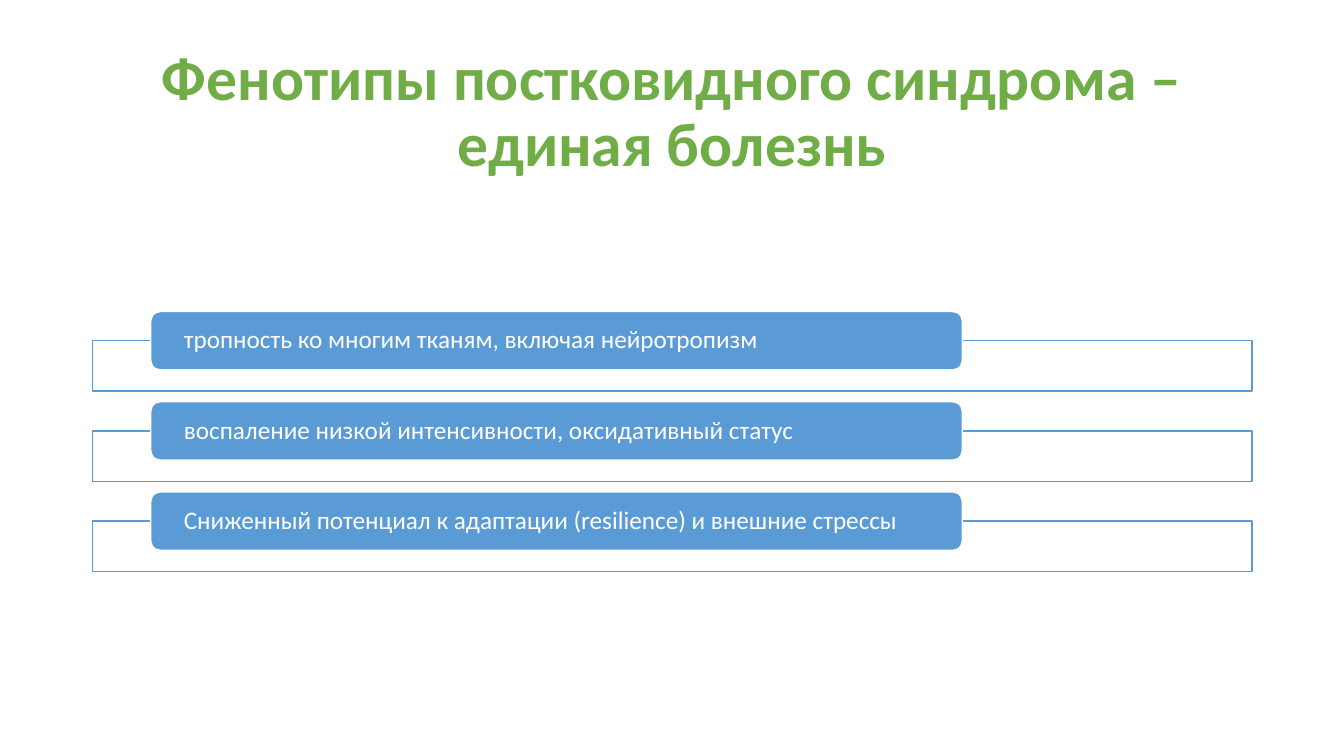
from pptx import Presentation
from pptx.dml.color import RGBColor
from pptx.enum.shapes import MSO_SHAPE as Shape
from pptx.enum.text import MSO_ANCHOR as Anchor, MSO_AUTO_SIZE as AutoSize, PP_ALIGN as Align
from pptx.oxml.ns import qn
from pptx.util import Inches, Pt
from lxml.etree import SubElement

COLORS = {"title": "70AD47", "accent": "5B9BD5", "white": "FFFFFF"}
TITLE = "Фенотипы постковидного синдрома – единая болезнь"
PHENOTYPES = [
    "тропность ко многим тканям, включая нейротропизм",
    "воспаление низкой интенсивности, оксидативный статус",
    "Сниженный потенциал к адаптации (resilience) и внешние стрессы",
]
TITLE_BOX = (0.92, 0.4, 11.5, 1.45)
LIST_BOX = (0.92, 3.09, 11.5, 2.58)
ROW_HEIGHT = 0.79
FRAME_HEIGHT = 0.5
PILL_HEIGHT = 0.58
PILL_INDENT = 0.05
PILL_SHARE = 0.7


def rgb(name):
    return RGBColor.from_string(COLORS[name])


def set_text(shape, text, size, color, align, margin, bold=False):
    frame = shape.text_frame
    frame.text = text
    frame_format = {
        "word_wrap": True,
        "auto_size": AutoSize.NONE,
        "vertical_anchor": Anchor.MIDDLE,
        "margin_left": Inches(margin),
        "margin_right": Inches(margin),
        "margin_top": 0,
        "margin_bottom": 0,
    }
    para = frame.paragraphs[0]
    para_format = {"alignment": align, "line_spacing": 0.9, "space_before": Pt(0)}
    font_format = {"name": "Calibri", "size": Pt(size), "bold": bold}
    for target, values in (
        (frame, frame_format),
        (para, para_format),
        (para.runs[0].font, font_format),
    ):
        for name, value in values.items():
            setattr(target, name, value)
    para.runs[0].font.color.rgb = rgb(color)


def add_panel(page, kind, box, fill, line):
    panel = page.shapes.add_shape(kind, *map(Inches, box))
    panel.shadow.inherit = False
    panel.fill.solid()
    panel.fill.fore_color.rgb = rgb(fill)
    panel.line.color.rgb = rgb(line)
    panel.line.width = Pt(1)
    return panel


def add_title(page, box):
    title = page.shapes.title
    for name, value in zip(("left", "top", "width", "height"), box):
        setattr(title, name, Inches(value))
    set_text(title, TITLE, 44, "title", Align.CENTER, 0.1, bold=True)


def add_row(page, text, box):
    left, top, width, height = box
    frame_top = top + height - FRAME_HEIGHT
    frame = add_panel(page, Shape.RECTANGLE, (left, frame_top, width, FRAME_HEIGHT), "white", "accent")
    tint = frame.fill._xPr.find(qn("a:solidFill"))[0]
    SubElement(tint, qn("a:alpha"), val="90000")
    pill_box = (left + width * PILL_INDENT, top, width * PILL_SHARE, PILL_HEIGHT)
    pill = add_panel(page, Shape.ROUNDED_RECTANGLE, pill_box, "accent", "white")
    set_text(pill, text, 18, "white", Align.LEFT, 0.3)


def add_list(page, box):
    left, top, width, height = box
    pitch = (height - ROW_HEIGHT) / (len(PHENOTYPES) - 1)
    for index, text in enumerate(PHENOTYPES):
        add_row(page, text, (left, top + index * pitch, width, ROW_HEIGHT))


def main():
    deck = Presentation()
    deck.slide_width, deck.slide_height = Inches(13.33), Inches(7.5)
    page = deck.slides.add_slide(deck.slide_layouts.get_by_name("Title Only"))
    add_title(page, TITLE_BOX)
    add_list(page, LIST_BOX)
    deck.save("out.pptx")


if __name__ == "__main__":
    main()
